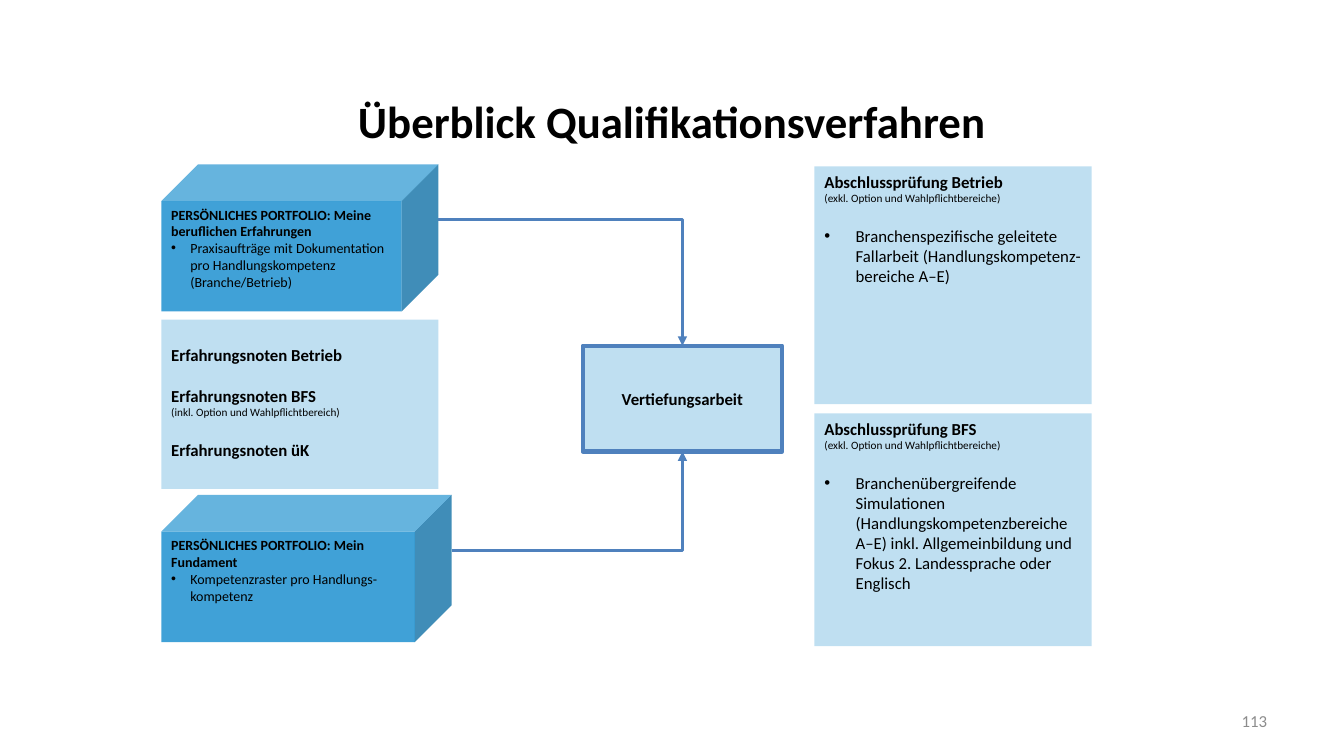
from dataclasses import dataclass

from lxml import etree
from pptx import Presentation
from pptx.dml.color import RGBColor
from pptx.enum.shapes import MSO_CONNECTOR as Link, MSO_SHAPE as Form
from pptx.enum.text import MSO_ANCHOR as Anchor, PP_ALIGN as Align
from pptx.oxml.ns import qn
from pptx.util import Emu, Inches, Pt

HUES = {"text": "000000", "fill": "0082CA", "line": "4F81BD", "page": "8C8C8C"}
FONT = "Calibri"
GAP = 14.65  # one 12 pt line

deck = Presentation()
deck.slide_width, deck.slide_height = Inches(13.33), Inches(7.5)
COL, ROW = deck.slide_width / 160, deck.slide_height / 90


@dataclass
class Line:
    text: str
    size: float = 12
    bold: bool = False
    dent: float = 0  # hanging bullet indent in inches
    gap: float = 0  # space before in points
    hue: str = "text"


@dataclass
class Box:
    col: float
    row: float
    cols: float
    rows: float
    lines: list[Line]
    form: Form = Form.RECTANGLE
    alpha: int = 25
    edge: float = 0
    inset: float = 0.05  # top margin in inches
    anchor: Anchor = Anchor.TOP
    align: Align = Align.LEFT


def rgb(name: str) -> RGBColor:
    return RGBColor.from_string(HUES[name])


def place(col: float, row: float, cols: float, rows: float) -> list[Emu]:
    return [Emu(round(n)) for n in (col * COL, row * ROW, cols * COL, rows * ROW)]


def write(frame, lines: list[Line], *, align=Align.LEFT,
          anchor=Anchor.TOP, inset: float = 0.05) -> None:
    frame.word_wrap = True
    frame.vertical_anchor = anchor
    frame.margin_top = Inches(inset)
    for i, line in enumerate(lines):
        para = frame.paragraphs[0] if i == 0 else frame.add_paragraph()
        para.alignment = align
        if line.gap:
            para.space_before = Pt(line.gap)
        if line.dent:
            props = para._p.get_or_add_pPr()
            props.set("marL", str(Inches(line.dent)))
            props.set("indent", str(-Inches(line.dent)))
            etree.SubElement(props, qn("a:buFont"), typeface="Arial")
            etree.SubElement(props, qn("a:buChar"), char="•")
        run = para.add_run()
        run.text = line.text
        font = run.font
        font.name, font.size, font.bold = FONT, Pt(line.size), line.bold
        font.color.rgb = rgb(line.hue)


def draw(slide, box: Box):
    shape = slide.shapes.add_shape(
        box.form, *place(box.col, box.row, box.cols, box.rows))
    shape.shadow.inherit = False
    shape.fill.solid()
    shape.fill.fore_color.rgb = rgb("fill")
    tint = shape._element.spPr.find(qn("a:solidFill"))[0]
    etree.SubElement(tint, qn("a:alpha"), val=str(box.alpha * 1000))
    if box.edge:
        shape.line.color.rgb = rgb("line")
        shape.line.width = Pt(box.edge)
    else:
        shape.line.fill.background()
    write(shape.text_frame, box.lines, align=box.align,
          anchor=box.anchor, inset=box.inset)
    return shape


def join(slide, cube, goal, side: int) -> None:
    """Bent arrow from a cube's right face to one side of the goal."""
    link = slide.shapes.add_connector(Link.ELBOW, 0, 0, 0, 0)
    link.begin_connect(cube, 3)
    link.end_connect(goal, side)
    # A cube numbers its right side 5, midway down the side face
    link._element.find(".//" + qn("a:stCxn")).set("idx", "5")
    depth = min(cube.width, cube.height) / 4
    link.begin_y = Emu(round(cube.top + (cube.height - depth) / 2))
    link.line.color.rgb = rgb("line")
    link.line.width = Pt(2.25)
    props = link._element.spPr
    props.find(qn("a:prstGeom")).set("prst", "bentConnector2")
    etree.SubElement(props.find(qn("a:ln")), qn("a:tailEnd"), type="triangle")
    etree.SubElement(props, qn("a:effectLst"))


def cube(row: float, cols: float, head: str, item: str) -> Box:
    return Box(19.2, row, cols, 17.52,
               [Line(head, 10, True), Line(item, 10, dent=0.19)],
               form=Form.CUBE, alpha=75)


def exam(row: float, rows: float, head: str, item: str) -> Box:
    return Box(96.96, row, 33, rows, [
        Line(head, bold=True),
        Line("(exkl. Option und Wahlpflichtbereiche)", 8),
        Line(item, dent=0.31, gap=GAP)])


def main() -> None:
    slide = deck.slides.add_slide(deck.slide_layouts[5])

    # Title and page number
    title = slide.shapes.title
    title.left, title.top, title.width, title.height = place(8, 10.08, 144, 8.52)
    write(title.text_frame, [Line("Überblick Qualifikationsverfahren", 32, True)],
          align=Align.CENTER, anchor=Anchor.MIDDLE)
    page = slide.shapes.add_textbox(*place(114.72, 83.4, 37.32, 4.8))
    write(page.text_frame, [Line("113", hue="page")],
          align=Align.RIGHT, anchor=Anchor.MIDDLE)

    # Portfolios
    work = draw(slide, cube(
        19.56, 33, "PERSÖNLICHES PORTFOLIO: Meine beruflichen Erfahrungen",
        "Praxisaufträge mit Dokumentation pro Handlungskompetenz (Branche/Betrieb)"))
    base = draw(slide, cube(
        58.92, 34.56, "PERSÖNLICHES PORTFOLIO: Mein Fundament",
        "Kompetenzraster pro Handlungs-kompetenz"))

    # Grades
    draw(slide, Box(19.2, 38.04, 33, 20.16, [
        Line("Erfahrungsnoten Betrieb", bold=True),
        Line("Erfahrungsnoten BFS", bold=True, gap=GAP),
        Line("(inkl. Option und Wahlpflichtbereich)", 8),
        Line("Erfahrungsnoten üK", bold=True, gap=GAP)], inset=0.25))

    # In-depth paper and its sources
    paper = draw(slide, Box(
        69.36, 41.16, 23.76, 12.6, [Line("Vertiefungsarbeit", bold=True)],
        edge=3, anchor=Anchor.MIDDLE, align=Align.CENTER))
    join(slide, base, paper, 2)
    join(slide, work, paper, 0)

    # Final exams
    draw(slide, exam(
        19.8, 28.32, "Abschlussprüfung Betrieb",
        "Branchenspezifische geleitete Fallarbeit (Handlungskompetenz-bereiche A–E)"))
    draw(slide, exam(
        49.2, 27.72, "Abschlussprüfung BFS",
        "Branchenübergreifende Simulationen (Handlungskompetenzbereiche A–E) "
        "inkl. Allgemeinbildung und Fokus 2. Landessprache oder Englisch"))

    deck.save("out.pptx")


if __name__ == "__main__":
    main()
